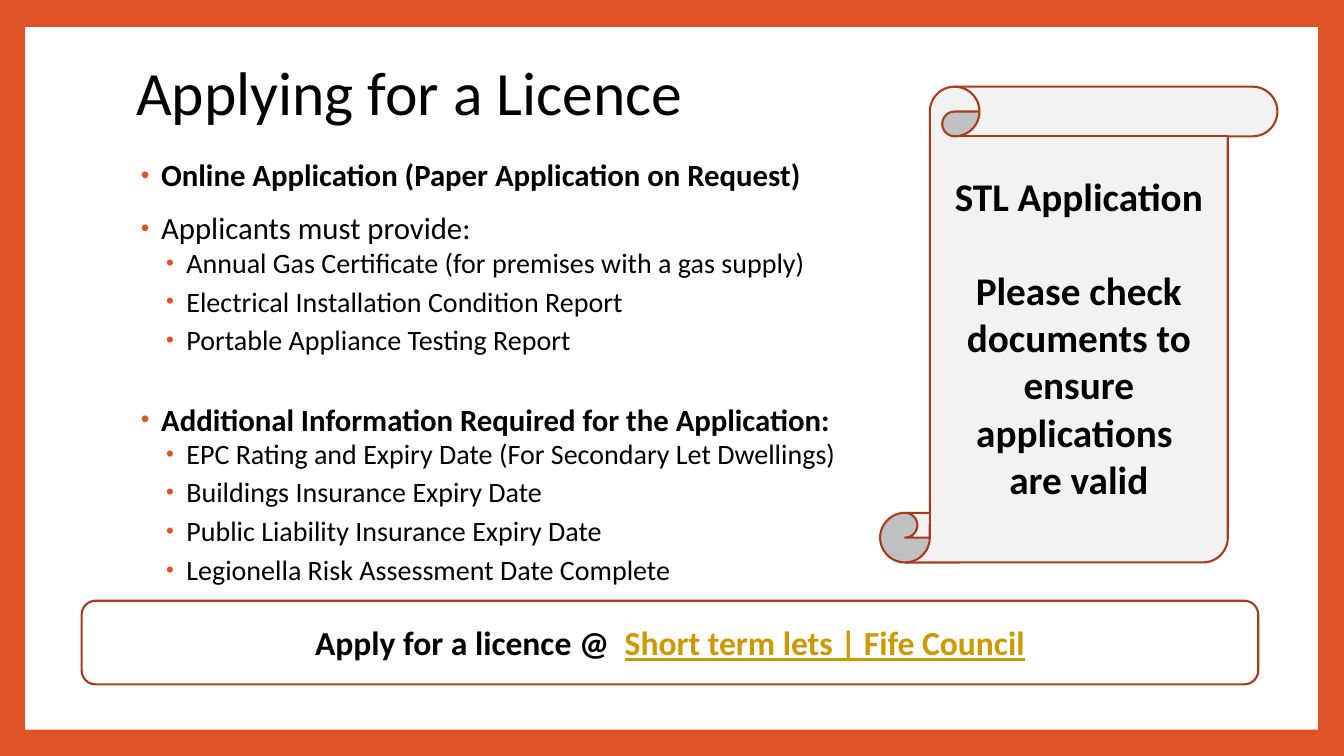
from dataclasses import dataclass

from lxml.etree import SubElement
from pptx import Presentation
from pptx.dml.color import RGBColor
from pptx.enum.shapes import MSO_SHAPE
from pptx.enum.text import MSO_ANCHOR, PP_ALIGN
from pptx.oxml.ns import qn
from pptx.util import Inches, Pt

ORANGE = RGBColor(0xDF, 0x53, 0x27)
RUST = RGBColor(0xA5, 0x3D, 0x1D)
GOLD = RGBColor(0xCC, 0x99, 0x00)
PALE = RGBColor(0xF2, 0xF2, 0xF2)
WHITE = RGBColor(0xFF, 0xFF, 0xFF)
BLACK = RGBColor(0x00, 0x00, 0x00)


@dataclass
class Box:
    left: float
    top: float
    width: float
    height: float

    def lengths(self) -> list:
        return [Inches(v) for v in (self.left, self.top, self.width, self.height)]


@dataclass
class Bullet:
    text: str
    level: int = 0
    bold: bool = False
    line_spacing: float = 0.9


BULLET_SIZES = {0: 22, 1: 20}
BULLET_SPACING = {
    0: {"space_before": Pt(14), "space_after": Pt(0)},
    1: {"space_before": Pt(2), "space_after": Pt(4)},
}
BULLETS = [
    Bullet("Online Application (Paper Application on Request)", bold=True),
    Bullet("Applicants must provide:"),
    Bullet("Annual Gas Certificate (for premises with a gas supply)", 1),
    Bullet("Electrical Installation Condition Report", 1),
    Bullet("Portable Appliance Testing Report", 1),
    Bullet("Additional Information Required for the Application:", bold=True, line_spacing=1.5),
    Bullet("EPC Rating and Expiry Date (For Secondary Let Dwellings)", 1),
    Bullet("Buildings Insurance Expiry Date", 1),
    Bullet("Public Liability Insurance Expiry Date", 1),
    Bullet("Legionella Risk Assessment Date Complete", 1),
]


def set_all(target, values: dict) -> None:
    for name, value in values.items():
        setattr(target, name, value)


def add_run(p, text: str, size: float, color: RGBColor = BLACK, **font):
    r = p.add_run()
    r.text = text
    set_all(r.font, {"name": "Calibri", "size": Pt(size), **font})
    r.font.color.rgb = color
    return r


def add_panel(s, kind: MSO_SHAPE, box: Box, fill: RGBColor, outlined: bool = True):
    sp = s.shapes.add_shape(kind, *box.lengths())
    sp.shadow.inherit = False
    sp.fill.solid()
    sp.fill.fore_color.rgb = fill
    if outlined:
        sp.line.color.rgb = RUST
        sp.line.width = Pt(1.5)
    else:
        sp.line.fill.background()
    set_all(sp.text_frame, {"word_wrap": True, "vertical_anchor": MSO_ANCHOR.MIDDLE})
    sp.text_frame.paragraphs[0].alignment = PP_ALIGN.CENTER
    return sp


def add_bullet(p, bullet: Bullet) -> None:
    set_all(p, {"level": bullet.level, "line_spacing": bullet.line_spacing,
                **BULLET_SPACING[bullet.level]})
    add_run(p, bullet.text, BULLET_SIZES[bullet.level], bold=bullet.bold)
    pPr = p._p.get_or_add_pPr()
    pPr.set("marL", str(Inches(0.25 * (bullet.level + 1))))
    pPr.set("indent", str(Inches(-0.2)))
    color = SubElement(pPr, qn("a:buClr"))
    SubElement(color, qn("a:srgbClr"), val=str(ORANGE))
    SubElement(pPr, qn("a:buSzPct"), val="80000")
    SubElement(pPr, qn("a:buFont"), typeface="Arial")
    SubElement(pPr, qn("a:buChar"), char="•")


def main() -> None:
    prs = Presentation()
    prs.slide_width, prs.slide_height = Inches(13.33), Inches(7.5)
    s = prs.slides.add_slide(prs.slide_layouts[5])

    # Orange frame around a white page
    s.background.fill.solid()
    s.background.fill.fore_color.rgb = ORANGE
    page = add_panel(s, MSO_SHAPE.RECTANGLE, Box(0.25, 0.27, 12.82, 6.97), WHITE, outlined=False)
    s.shapes._spTree.insert(2, page._element)

    # Title
    title = s.shapes.title
    places = Box(1.25, 0.37, 10.8, 1.16).lengths()
    set_all(title, dict(zip(("left", "top", "width", "height"), places)))
    title.text_frame.vertical_anchor = MSO_ANCHOR.MIDDLE
    p = title.text_frame.paragraphs[0]
    set_all(p, {"alignment": PP_ALIGN.LEFT, "line_spacing": 0.9})
    add_run(p, "Applying for a Licence", 44)

    # Bulleted requirements
    tf = s.shapes.add_textbox(*Box(1.25, 1.54, 11.31, 5.59).lengths()).text_frame
    tf.word_wrap = True
    for i, bullet in enumerate(BULLETS):
        add_bullet(tf.add_paragraph() if i else tf.paragraphs[0], bullet)

    # Application link
    banner = add_panel(s, MSO_SHAPE.ROUNDED_RECTANGLE, Box(0.81, 5.96, 11.67, 0.83), WHITE)
    p = banner.text_frame.paragraphs[0]
    add_run(p, "Apply for a licence @  ", 24, bold=True)
    add_run(p, "Short term lets | Fife Council", 24, GOLD, bold=True, underline=True)

    # Scroll with the reminder
    scroll = add_panel(s, MSO_SHAPE.VERTICAL_SCROLL, Box(8.73, 0.86, 3.94, 4.72), PALE)
    tf = scroll.text_frame
    add_run(tf.paragraphs[0], "STL Application", 28, bold=True)
    reminder = {"Please check documents to ensure applications ": 34, "are valid": 0}
    for text, gap in reminder.items():
        p = tf.add_paragraph()
        set_all(p, {"alignment": PP_ALIGN.CENTER, "space_before": Pt(gap)})
        add_run(p, text, 28, bold=True)

    prs.save("out.pptx")


if __name__ == "__main__":
    main()
